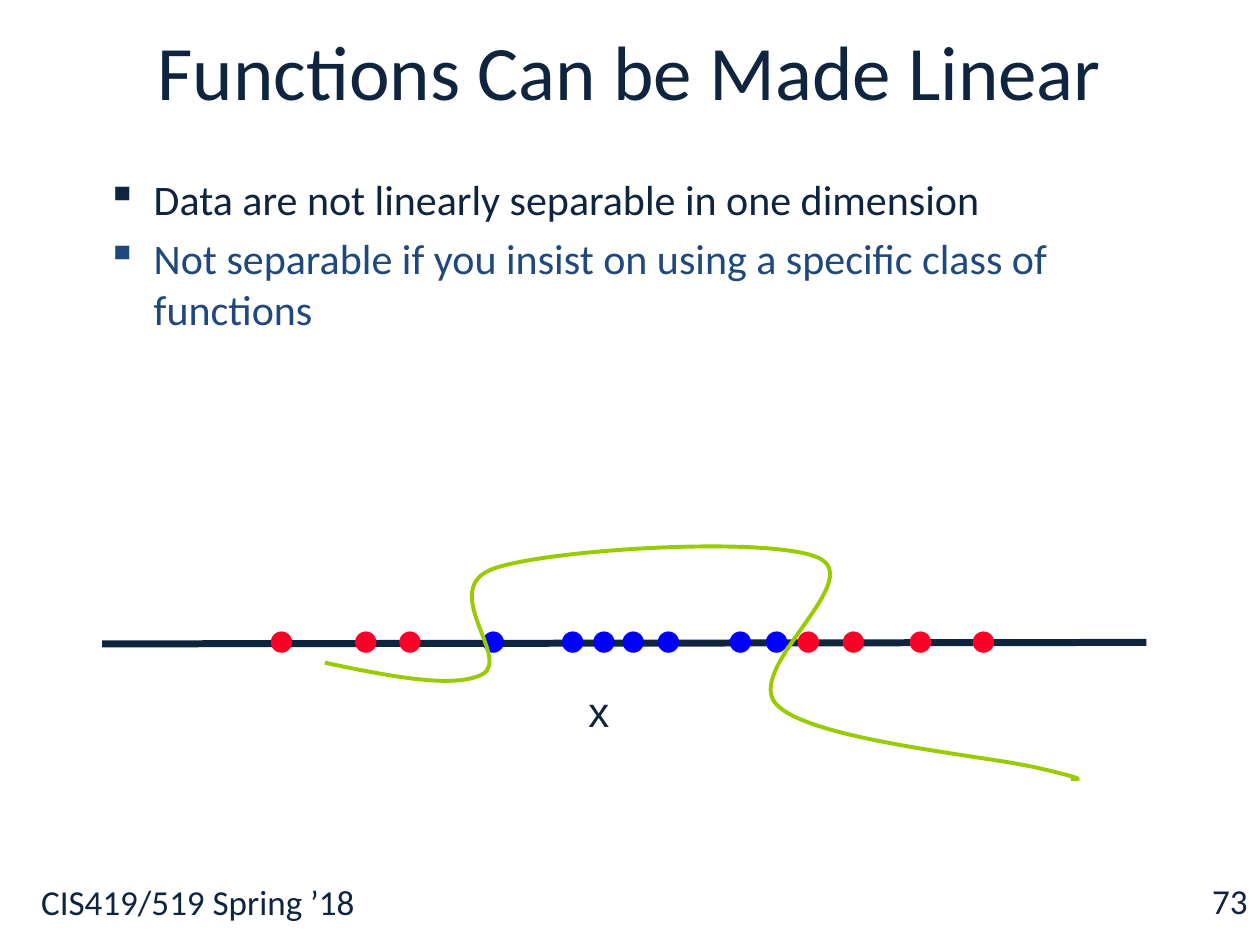
import dataclasses

import lxml.etree
import pptx
import pptx.dml.color
import pptx.enum.shapes
import pptx.enum.text
import pptx.oxml.ns
import pptx.util

Cm = pptx.util.Cm
Pt = pptx.util.Pt
qn = pptx.oxml.ns.qn
Align = pptx.enum.text.PP_ALIGN
Anchor = pptx.enum.text.MSO_ANCHOR


@dataclasses.dataclass(frozen=True)
class Theme:
    font: str = "Calibri"
    axis_font: str = "Arial"
    title_size: float = 44
    body_size: float = 24
    footer_size: float = 20
    dark: str = "0F243E"
    accent: str = "1F497D"
    red: str = "FC0128"
    blue: str = "0000FF"
    green: str = "99CC00"


THEME = Theme()

BULLETS = [
    ("Data are not linearly separable in one dimension", THEME.dark),
    ("Not separable if you insist on using a specific class of functions", THEME.accent),
]

# Left edges of the data points, in cm
DOT_SIZE = 0.43
DOT_TOP = 12.73
DOTS = {
    THEME.red: [5.46, 7.16, 8.05, 16.08, 16.99, 18.34, 19.61],
    THEME.blue: [9.73, 11.33, 11.96, 12.55, 13.26, 14.71, 15.44],
}

# Start point, then two control points and an end point per Bézier segment, in cm
CURVE = [
    (6.55, 13.36),
    (7.87, 13.64), (9.17, 13.89), (9.73, 13.59),
    (10.31, 13.26), (8.81, 11.86), (9.96, 11.46),
    (11.07, 11.07), (15.54, 10.8), (16.51, 11.25),
    (17.48, 11.71), (14.94, 13.51), (15.67, 14.22),
    (16.41, 14.94), (19.96, 15.24), (20.96, 15.49),
    (21.95, 15.72), (21.77, 15.72), (21.59, 15.7),
]


def rgb(color):
    return pptx.dml.color.RGBColor.from_string(color)


def style_paragraph(paragraph, size, color=THEME.dark, font=THEME.font, align=Align.LEFT):
    paragraph.alignment = align
    paragraph.font.name = font
    paragraph.font.size = Pt(size)
    paragraph.font.color.rgb = rgb(color)


def add_text_frame(slide, box, anchor=Anchor.TOP, wrap=True):
    frame = slide.shapes.add_textbox(*map(Cm, box)).text_frame
    frame.word_wrap = wrap
    frame.vertical_anchor = anchor
    return frame


def add_label(slide, text, box, size, anchor=Anchor.TOP, wrap=True, **style):
    paragraph = add_text_frame(slide, box, anchor, wrap).paragraphs[0]
    paragraph.text = text
    style_paragraph(paragraph, size, **style)
    return paragraph


def add_bullets(slide, items, box):
    frame = add_text_frame(slide, box)
    for index, (text, color) in enumerate(items):
        paragraph = frame.add_paragraph() if index else frame.paragraphs[0]
        paragraph.text = text
        paragraph.space_before = Pt(0.2 * THEME.body_size)
        style_paragraph(paragraph, THEME.body_size, color)
        properties = paragraph._p.get_or_add_pPr()
        indent = Cm(0.95)
        properties.set("marL", str(indent))
        properties.set("indent", str(-indent))
        bullet = lxml.etree.Element(qn("a:buChar"), char="▪")
        properties.find(qn("a:defRPr")).addprevious(bullet)


def add_line(slide, start, end, color, width):
    line = slide.shapes.add_connector(
        pptx.enum.shapes.MSO_CONNECTOR.STRAIGHT, *map(Cm, start + end))
    line.line.color.rgb = rgb(color)
    line.line.width = Pt(width)
    lxml.etree.SubElement(line._element.spPr, qn("a:effectLst"))


def add_dot(slide, left, color):
    dot = slide.shapes.add_shape(
        pptx.enum.shapes.MSO_SHAPE.OVAL,
        Cm(left), Cm(DOT_TOP), Cm(DOT_SIZE), Cm(DOT_SIZE))
    dot.shadow.inherit = False
    dot.fill.solid()
    dot.fill.fore_color.rgb = rgb(color)
    dot.line.fill.background()


def add_curve(slide, points, color, width):
    start, *rest = [(Cm(x), Cm(y)) for x, y in points]
    builder = slide.shapes.build_freeform(*start)
    builder.add_line_segments(rest, close=False)
    curve = builder.convert_to_shape()
    curve.shadow.inherit = False
    curve.fill.background()
    curve.line.color.rgb = rgb(color)
    curve.line.width = Pt(width)

    # Every three straight segments become one Bézier segment
    segments = list(curve._element.spPr.iter(qn("a:lnTo")))
    for first in range(0, len(segments), 3):
        bezier = lxml.etree.Element(qn("a:cubicBezTo"))
        segments[first].addprevious(bezier)
        for segment in segments[first:first + 3]:
            bezier.append(segment[0])
            segment.getparent().remove(segment)


def main():
    presentation = pptx.Presentation()
    presentation.slide_width = Cm(25.4)
    presentation.slide_height = Cm(19.05)
    slide = presentation.slides.add_slide(presentation.slide_layouts[6])

    # Footer, title and bullets
    footer = add_label(slide, "CIS419/519 Spring ’18", (0.58, 17.63, 24.38, 1.42),
                       THEME.footer_size)
    footer.space_before = Pt(0.2 * THEME.footer_size)
    add_label(slide, "Functions Can be Made Linear", (1.9, 0.08, 21.6, 2.67),
              THEME.title_size, Anchor.MIDDLE, align=Align.CENTER)
    add_bullets(slide, BULLETS, (1.9, 3.38, 21.6, 13.84))
    add_label(slide, "73", (19.48, 17.65, 5.92, 1.02),
              THEME.footer_size, Anchor.MIDDLE, align=Align.RIGHT)

    # Number line with two classes of points
    add_line(slide, (2.06, 12.98), (23.11, 12.95), THEME.dark, 4)
    for color, positions in DOTS.items():
        for left in positions:
            add_dot(slide, left, color)
    add_label(slide, "x", (11.61, 13.69, 0.94, 1.27), THEME.body_size,
              wrap=False, font=THEME.axis_font)

    # Separating curve
    add_curve(slide, CURVE, THEME.green, 2.25)

    presentation.save("out.pptx")


if __name__ == "__main__":
    main()
